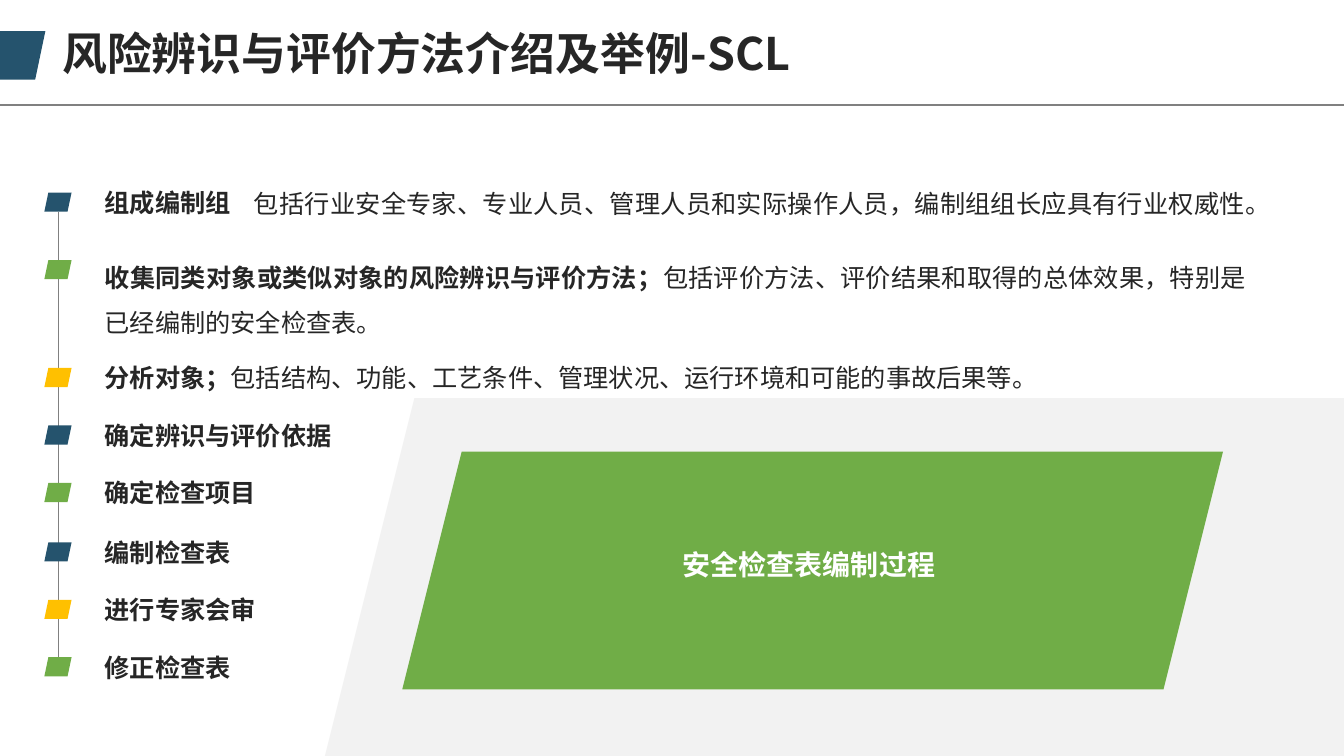
from lxml.etree import SubElement
from pptx import Presentation
from pptx.dml.color import RGBColor
from pptx.enum.shapes import MSO_CONNECTOR, MSO_SHAPE
from pptx.enum.text import MSO_AUTO_SIZE, PP_ALIGN
from pptx.oxml.ns import qn
from pptx.util import Pt

PX = 9144
FONT = "Noto Sans CJK SC"
COLORS = {
    "navy": "25536D",
    "green": "70AD47",
    "amber": "FFC000",
    "panel": "F2F2F2",
    "rule": "808080",
    "ink": "262626",
    "white": "FFFFFF",
}
STEPS = [
    (191, "navy", "组成编制组", ""),
    (258, "green", "收集同类对象或类似对象的风险辨识与评价方法；",
     "包括评价方法、评价结果和取得的总体效果，特别是已经编制的安全检查表。"),
    (365, "amber", "分析对象；",
     "包括结构、功能、工艺条件、管理状况、运行环境和可能的事故后果等。"),
    (422, "navy", "确定辨识与评价依据", ""),
    (479, "green", "确定检查项目", ""),
    (538, "navy", "编制检查表", ""),
    (595, "amber", "进行专家会审", ""),
    (652, "green", "修正检查表", ""),
]
TEAM_DETAIL = "包括行业安全专家、专业人员、管理人员和实际操作人员，编制组组长应具有行业权威性。"


def emu(*lengths):
    """Turn px lengths into EMU."""
    return [length * PX for length in lengths]


def add_slant(slide, box, color, slant=0.25):
    """Draw a plain filled parallelogram."""
    slab = slide.shapes.add_shape(MSO_SHAPE.PARALLELOGRAM, *emu(*box))
    slab.adjustments[0] = slant
    slab.shadow.inherit = False
    slab.fill.solid()
    slab.fill.fore_color.rgb = RGBColor.from_string(COLORS[color])
    slab.line.fill.background()


def add_rule(slide, ends, weight):
    """Draw a straight grey line between two points."""
    rule = slide.shapes.add_connector(MSO_CONNECTOR.STRAIGHT, *emu(*ends))
    rule.line.color.rgb = RGBColor.from_string(COLORS["rule"])
    rule.line.width = Pt(weight)
    SubElement(rule._element.spPr, qn("a:effectLst"))


def add_text(slide, box, parts, size=18, color="ink", align=PP_ALIGN.LEFT,
             wrap=True, spacing=None):
    """Write one paragraph made of (text, bold) parts."""
    label = slide.shapes.add_textbox(*emu(*box))
    frame = label.text_frame
    frame.word_wrap = wrap
    frame.auto_size = MSO_AUTO_SIZE.SHAPE_TO_FIT_TEXT
    paragraph = frame.paragraphs[0]
    paragraph.alignment = align
    if spacing:
        paragraph.line_spacing = spacing
    font = paragraph.font
    font.name = FONT
    font.size = Pt(size)
    font.color.rgb = RGBColor.from_string(COLORS[color])
    SubElement(font._element, qn("a:ea"), typeface=FONT)
    for text, bold in parts:
        run = paragraph.add_run()
        run.text = text
        run.font.bold = bold


def add_header(slide, left, top, width, height):
    """Place the title, its slanted tab and the rule below."""
    add_slant(slide, (left - 22, top + 31, 67, 48), "navy", 0.21)
    add_rule(slide, (left, top + height, left + width, top + height), 1.75)
    add_text(slide, (left + 52, top + 21, 763, 64),
             [("风险辨识与评价方法介绍及举例-SCL", True)], size=32)


def add_steps(slide, left, top, width, height):
    """Place the timeline of steps with markers and wording."""
    text_left = left + 50
    add_rule(slide, (left + 14, top + 19, left + 14, top + height - 19), 1)
    for marker_top, color, heading, detail in STEPS:
        add_slant(slide, (left, marker_top, 27, 19), color, 0.21)
        two_lines = len(heading + detail) > 45
        text_top = marker_top - (18 if two_lines else 10)
        parts = [(heading, True)] + ([(detail, False)] if detail else [])
        add_text(slide, (text_left, text_top, width - 50 if detail else 249, 96 if two_lines else 40),
                 parts, wrap=bool(detail), spacing=1.5 if two_lines else None,
                 align=PP_ALIGN.JUSTIFY if detail else PP_ALIGN.LEFT)
    add_text(slide, (left + 198, top - 9, width - 198, 40), [(TEAM_DETAIL, False)],
             align=PP_ALIGN.JUSTIFY)


def add_process_banner(slide, left, top, width, height):
    """Place the grey panel with the green banner and its caption."""
    add_slant(slide, (left, top, width, height), "panel")
    add_slant(slide, (left + 77, top + 53, 814, 236), "green")
    add_text(slide, (left + 339, top + 143, 289, 44), [("安全检查表编制过程 ", True)],
             size=20, color="white", align=PP_ALIGN.CENTER)


def main():
    """Build the slide and save it."""
    deck = Presentation()
    deck.slide_width, deck.slide_height = emu(1333, 750)
    slide = deck.slides.add_slide(deck.slide_layouts[6])
    add_process_banner(slide, 322, 395, 1118, 356)
    add_header(slide, 0, 0, 1333, 104)
    add_steps(slide, 44, 191, 1202, 480)
    deck.save("out.pptx")


if __name__ == "__main__":
    main()
